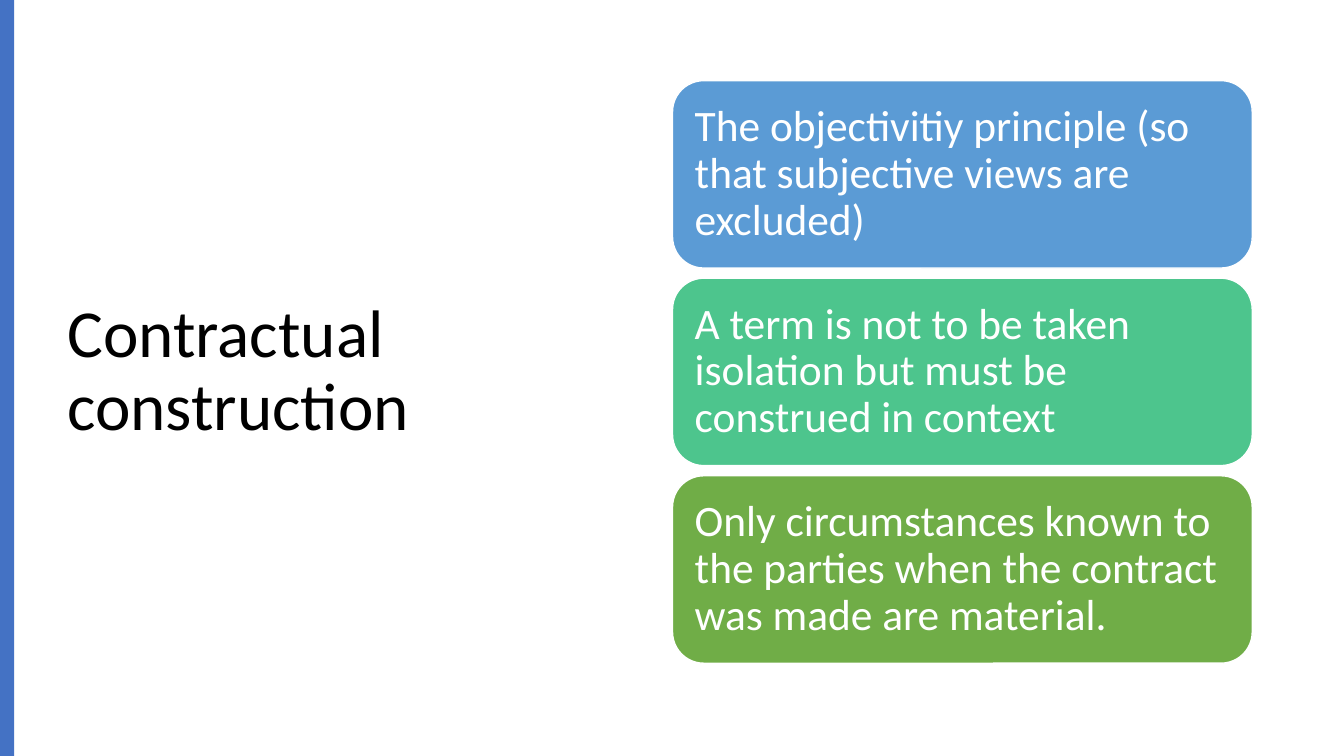
"""Build the contractual construction slide."""
from pptx import Presentation
from pptx.dml.color import RGBColor
from pptx.enum.shapes import MSO_SHAPE
from pptx.enum.text import MSO_ANCHOR, PP_ALIGN
from pptx.util import Inches, Pt

TITLE = "Contractual construction"
PRINCIPLES = [
    ("The objectivitiy principle (so that subjective views are excluded)", "5B9BD5"),
    ("A term is not to be taken isolation but must be construed in context", "4DC58D"),
    ("Only circumstances known to the parties when the contract was made are material.", "70AD47"),
]
CARD_LEFT, CARD_TOP, CARD_WIDTH, CARD_HEIGHT = 6.67, 0.8, 5.75, 1.86
CARD_STEP = CARD_HEIGHT + 0.1


def color(value):
    return RGBColor.from_string(value)


def add_block(page, shape_type, place, fill):
    block = page.shapes.add_shape(shape_type, *map(Inches, place))
    block.shadow.inherit = False
    block.fill.solid()
    block.fill.fore_color.rgb = color(fill)
    block.line.fill.background()
    return block


def write(box, text, size, ink, margin):
    frame = box.text_frame
    frame.text = text
    frame.word_wrap = True
    frame.vertical_anchor = MSO_ANCHOR.MIDDLE
    frame.margin_left = frame.margin_right = Inches(margin)
    frame.margin_top = frame.margin_bottom = Inches(margin)
    para = frame.paragraphs[0]
    para.alignment = PP_ALIGN.LEFT
    para.line_spacing = 0.9
    font = para.runs[0].font
    font.name = "Calibri"
    font.size = Pt(size)
    font.color.rgb = color(ink)


def main():
    deck = Presentation()
    deck.slide_width, deck.slide_height = Inches(13.33), Inches(7.5)
    page = deck.slides.add_slide(deck.slide_layouts[6])

    title = page.shapes.add_textbox(*map(Inches, (0.57, 0.68, 5.67, 6.02)))
    write(title, TITLE, 48, "000000", 0.1)
    add_block(page, MSO_SHAPE.RECTANGLE, (0, 0, 0.14, 7.5), "4472C4")

    for index, (text, fill) in enumerate(PRINCIPLES):
        place = (CARD_LEFT, CARD_TOP + index * CARD_STEP, CARD_WIDTH, CARD_HEIGHT)
        card = add_block(page, MSO_SHAPE.ROUNDED_RECTANGLE, place, fill)
        card.line.color.rgb = color("FFFFFF")
        card.line.width = Pt(1)
        write(card, text, 31, "FFFFFF", 0.13)

    deck.save("out.pptx")


if __name__ == "__main__":
    main()
